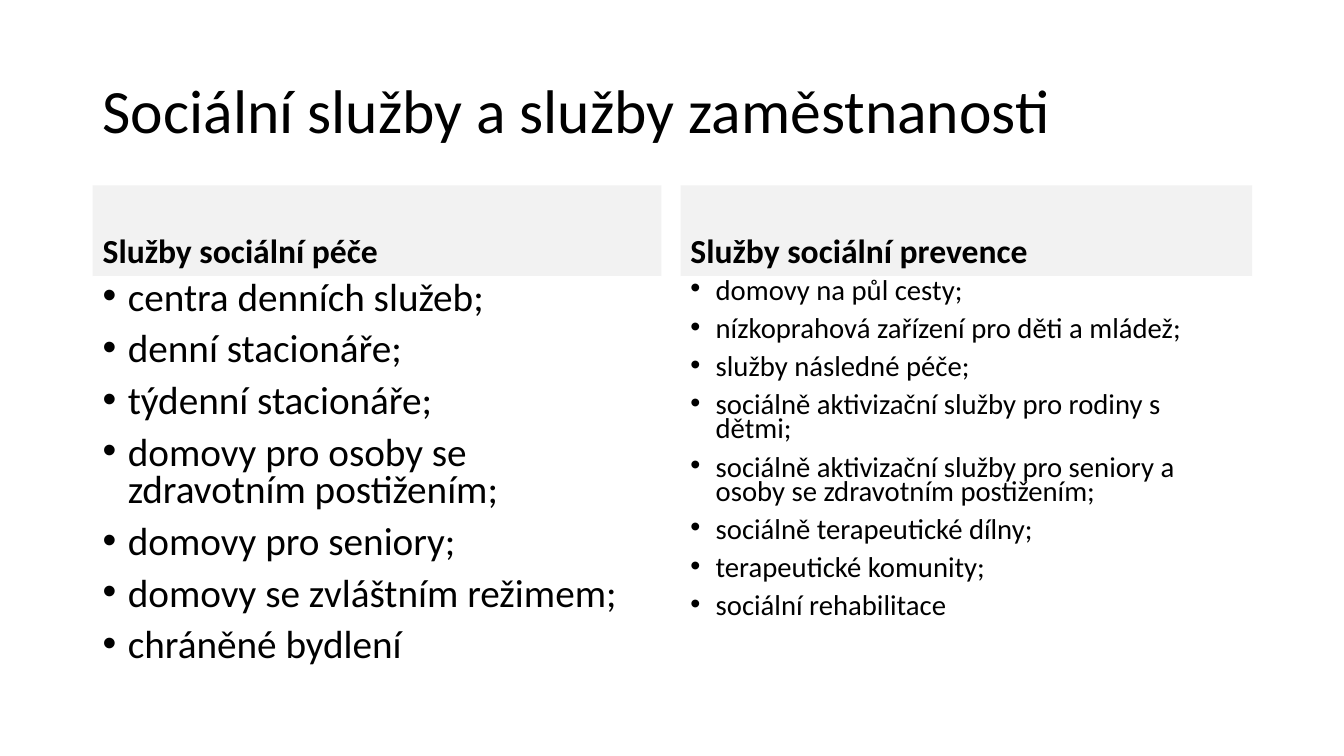
from dataclasses import dataclass

from lxml.etree import SubElement
from pptx import Presentation
from pptx.dml.color import RGBColor
from pptx.enum.shapes import MSO_SHAPE
from pptx.enum.text import MSO_ANCHOR, PP_ALIGN
from pptx.oxml.ns import qn
from pptx.util import Pt

PX = 9144
BULLET_INDENT = 25
HEADING_HEIGHT = 90


@dataclass(frozen=True)
class Theme:
    font: str = "Calibri"
    ink: RGBColor = RGBColor(0, 0, 0)
    paper: RGBColor = RGBColor(255, 255, 255)
    band: RGBColor = RGBColor(242, 242, 242)
    title_size: float = 44
    heading_size: float = 24
    care_size: float = 28
    prevention_size: float = 20.5


THEME = Theme()

TITLE = "Sociální služby a služby zaměstnanosti"
CARE = [
    "centra denních služeb;",
    "denní stacionáře;",
    "týdenní stacionáře;",
    "domovy pro osoby se zdravotním postižením;",
    "domovy pro seniory;",
    "domovy se zvláštním režimem;",
    "chráněné bydlení",
]
PREVENTION = [
    "domovy na půl cesty;",
    "nízkoprahová zařízení pro děti a mládež;",
    "služby následné péče;",
    "sociálně aktivizační služby pro rodiny s dětmi;",
    "sociálně aktivizační služby pro seniory a osoby se zdravotním postižením;",
    "sociálně terapeutické dílny;",
    "terapeutické komunity;",
    "sociální rehabilitace",
]


def apply(target, formats):
    for name, value in formats.items():
        setattr(target, name, value)


def add_bullet(paragraph):
    properties = paragraph._p.get_or_add_pPr()
    properties.set("marL", str(BULLET_INDENT * PX))
    properties.set("indent", str(-BULLET_INDENT * PX))
    SubElement(properties, qn("a:buFont"), typeface="Arial")
    SubElement(properties, qn("a:buChar"), char="•")


def add_panel(slide, box, lines, size, spacing, anchor, fill=THEME.paper,
              bold=False, before=10, bulleted=False):
    panel = slide.shapes.add_shape(MSO_SHAPE.RECTANGLE, *(side * PX for side in box))
    panel.shadow.inherit = False
    panel.fill.solid()
    panel.fill.fore_color.rgb = fill
    panel.line.fill.background()
    frame = panel.text_frame
    apply(frame, {"word_wrap": True, "vertical_anchor": anchor})
    for index, line in enumerate(lines):
        paragraph = frame.add_paragraph() if index else frame.paragraphs[0]
        apply(paragraph, {"alignment": PP_ALIGN.LEFT, "line_spacing": spacing,
                          "space_before": Pt(before)})
        if bulleted:
            add_bullet(paragraph)
        run = paragraph.add_run()
        run.text = line
        apply(run.font, {"name": THEME.font, "size": Pt(size), "bold": bold})
        run.font.color.rgb = THEME.ink


def add_title(slide, box):
    add_panel(slide, box, [TITLE], THEME.title_size, 0.9, MSO_ANCHOR.MIDDLE, before=0)


def add_services(slide, box, heading, services, size, spacing):
    left, top, width, height = box
    add_panel(slide, (left, top, width, HEADING_HEIGHT), [heading],
              THEME.heading_size, 0.9, MSO_ANCHOR.BOTTOM, fill=THEME.band, bold=True)
    add_panel(slide, (left, top + HEADING_HEIGHT, width, height - HEADING_HEIGHT),
              services, size, spacing, MSO_ANCHOR.TOP, bulleted=True)


def main():
    deck = Presentation()
    apply(deck, {"slide_width": 1333 * PX, "slide_height": 750 * PX})
    slide = deck.slides.add_slide(deck.slide_layouts[6])
    add_title(slide, (92, 40, 1150, 145))
    add_services(slide, (92, 184, 564, 493), "Služby sociální péče",
                 CARE, THEME.care_size, 0.8)
    add_services(slide, (675, 184, 567, 493), "Služby sociální prevence",
                 PREVENTION, THEME.prevention_size, 0.7)
    deck.save("out.pptx")


if __name__ == "__main__":
    main()
